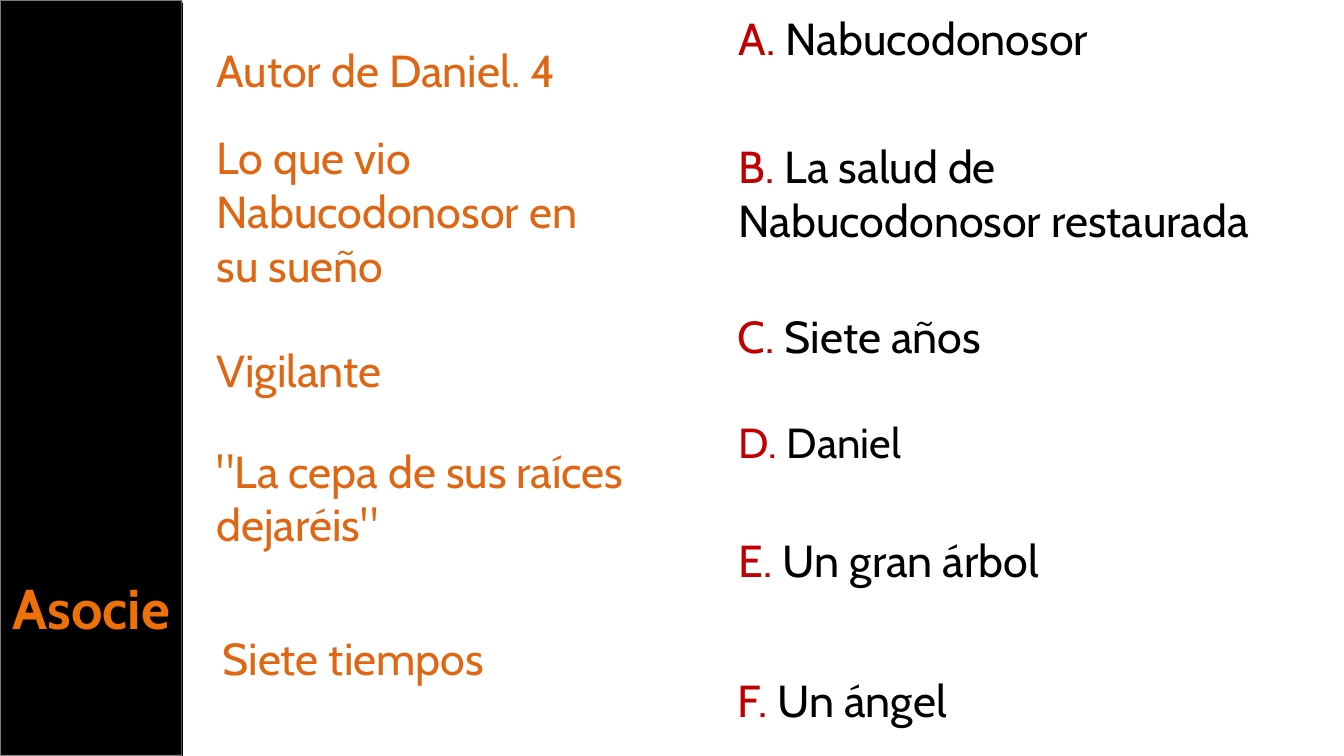
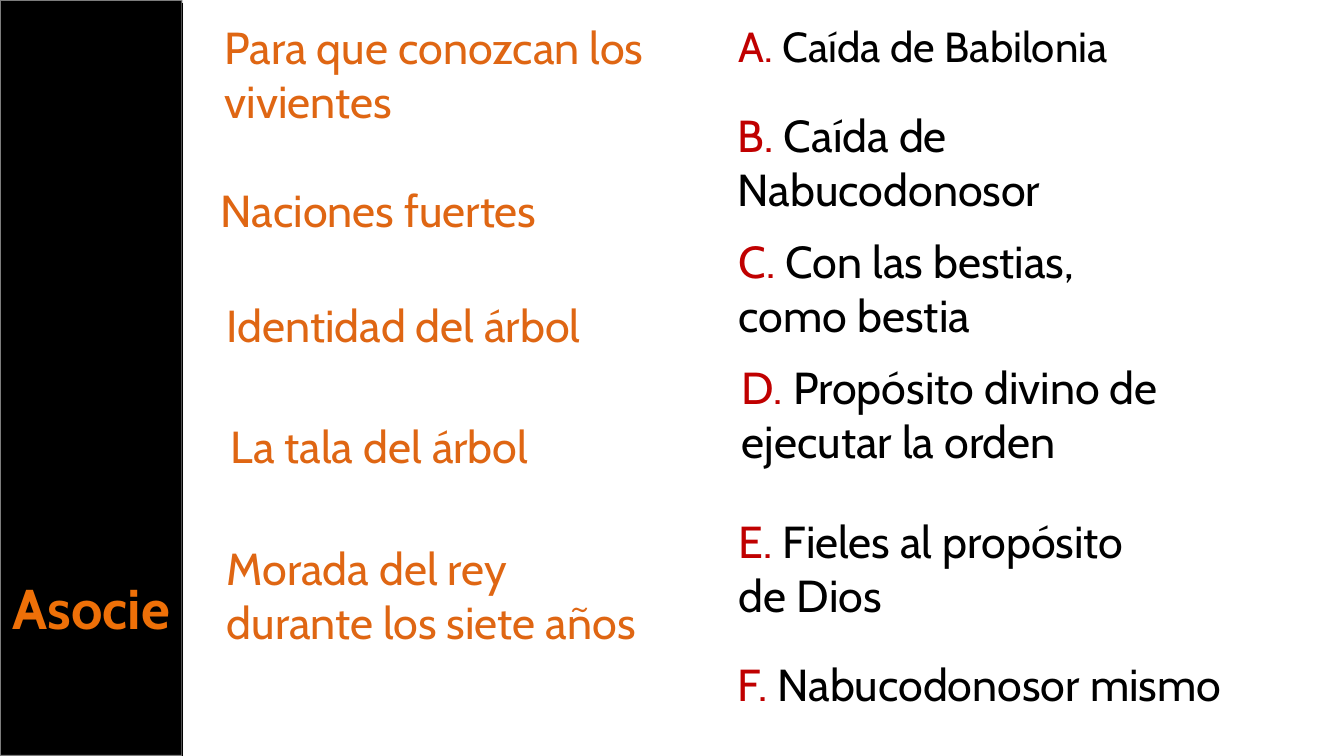
from lxml import etree
from pptx import Presentation
from pptx.dml.color import RGBColor
from pptx.enum import shapes, text
from pptx.oxml import ns
from pptx.util import Inches, Pt

BLACK = RGBColor(0x00, 0x00, 0x00)
PALE = RGBColor(0xF9, 0xF9, 0xF9)
TITLE_ORANGE = RGBColor(0xEE, 0x70, 0x08)
CLUE_ORANGE = RGBColor(0xDF, 0x66, 0x13)
LETTER_RED = RGBColor(0xC0, 0x00, 0x00)

EXERCISES = [
    {
        "clues": [
            (2.05, 0.37, 4.59, "Autor de Daniel. 4"),
            (2.05, 1.24, 3.84, "Lo que vio Nabucodonosor en su sueño"),
            (2.05, 3.35, 4.13, "Vigilante"),
            (2.05, 4.35, 4.39, '"La cepa de sus raíces dejaréis"'),
            (2.11, 6.21, 4.26, "Siete tiempos"),
        ],
        "answers": [
            (7.23, 0.06, 5.51, "Nabucodonosor", 32),
            (7.23, 1.33, 5.58, "La salud de Nabucodonosor restaurada", 32),
            (7.22, 3.01, 4.7, "Siete años", 32),
            (7.23, 4.08, 4.18, "Daniel", 30),
            (7.23, 5.24, 4.53, "Un gran árbol", 32),
            (7.22, 6.62, 5.59, "Un ángel", 32),
        ],
    },
    {
        "clues": [
            (2.13, 0.15, 4.59, "Para que conozcan los vivientes"),
            (2.09, 1.76, 3.84, "Naciones fuertes"),
            (2.15, 2.9, 4.13, "Identidad del árbol"),
            (2.19, 4.11, 4.06, "La tala del árbol"),
            (2.15, 5.32, 4.26, "Morada del rey durante los siete años"),
        ],
        "answers": [
            (7.23, 0.15, 4.18, "Caída de Babilonia", 30),
            (7.22, 1.02, 4.92, "Caída de Nabucodonosor", 32),
            (7.23, 2.27, 4.7, "Con las bestias, como bestia", 32),
            (7.26, 3.52, 5.51, "Propósito divino de ejecutar la orden", 32),
            (7.23, 5.05, 4.53, "Fieles al propósito de Dios", 32),
            (7.22, 6.47, 5.59, "Nabucodonosor mismo", 32),
        ],
    },
]


class MatchingDeck:
    font = "Cabin"
    width, height = 13.33, 7.5
    band_width = 1.81

    def __init__(self):
        self.deck = Presentation()
        self.deck.slide_width = Inches(self.width)
        self.deck.slide_height = Inches(self.height)
        self.slide = None

    def start_slide(self, title):
        self.slide = self.deck.slides.add_slide(self.deck.slide_layouts[6])
        self.band()
        self.words(0, 5.64, self.band_width, [(title, TITLE_ORANGE)], 40,
                   bold=True, align=text.PP_ALIGN.CENTER)
        self.edge()

    def band(self):
        band = self.slide.shapes.add_shape(
            shapes.MSO_SHAPE.RECTANGLE, 0, 0,
            Inches(self.band_width), Inches(self.height))
        band.shadow.inherit = False
        band.fill.solid()
        band.fill.fore_color.rgb = BLACK
        band.line.color.rgb = PALE
        band.line.width = Pt(1.35)
        outline = band.line._get_or_add_ln().find(".//" + ns.qn("a:srgbClr"))
        etree.SubElement(outline, ns.qn("a:alpha"), val="50000")

    def edge(self):
        edge = self.slide.shapes.add_connector(
            shapes.MSO_CONNECTOR.STRAIGHT,
            Inches(self.band_width), Inches(0.03),
            Inches(self.band_width), Inches(self.height))
        edge.line.color.rgb = BLACK
        edge.line.width = Pt(0.85)
        etree.SubElement(edge._element.spPr, ns.qn("a:effectLst"))

    def words(self, left, top, width, parts, size, bold=False,
              align=text.PP_ALIGN.LEFT):
        box = self.slide.shapes.add_textbox(
            Inches(left), Inches(top), Inches(width), Inches(0.64))
        frame = box.text_frame
        frame.word_wrap = True
        frame.auto_size = text.MSO_AUTO_SIZE.SHAPE_TO_FIT_TEXT
        line = frame.paragraphs[0]
        line.alignment = align
        for wording, color in parts:
            run = line.add_run()
            run.text = wording
            run.font.name = self.font
            run.font.size = Pt(size)
            run.font.bold = bold
            run.font.color.rgb = color

    def clue(self, left, top, width, wording):
        self.words(left, top, width, [(wording, CLUE_ORANGE)], 32)

    def answer(self, letter, left, top, width, wording, size):
        self.words(left, top, width,
                   [(f"{letter}. ", LETTER_RED), (wording, BLACK)], size)


def main():
    matching = MatchingDeck()
    for exercise in EXERCISES:
        matching.start_slide("Asocie")
        for clue in exercise["clues"]:
            matching.clue(*clue)
        for letter, answer in zip("ABCDEF", exercise["answers"]):
            matching.answer(letter, *answer)
    matching.deck.save("out.pptx")


if __name__ == "__main__":
    main()
